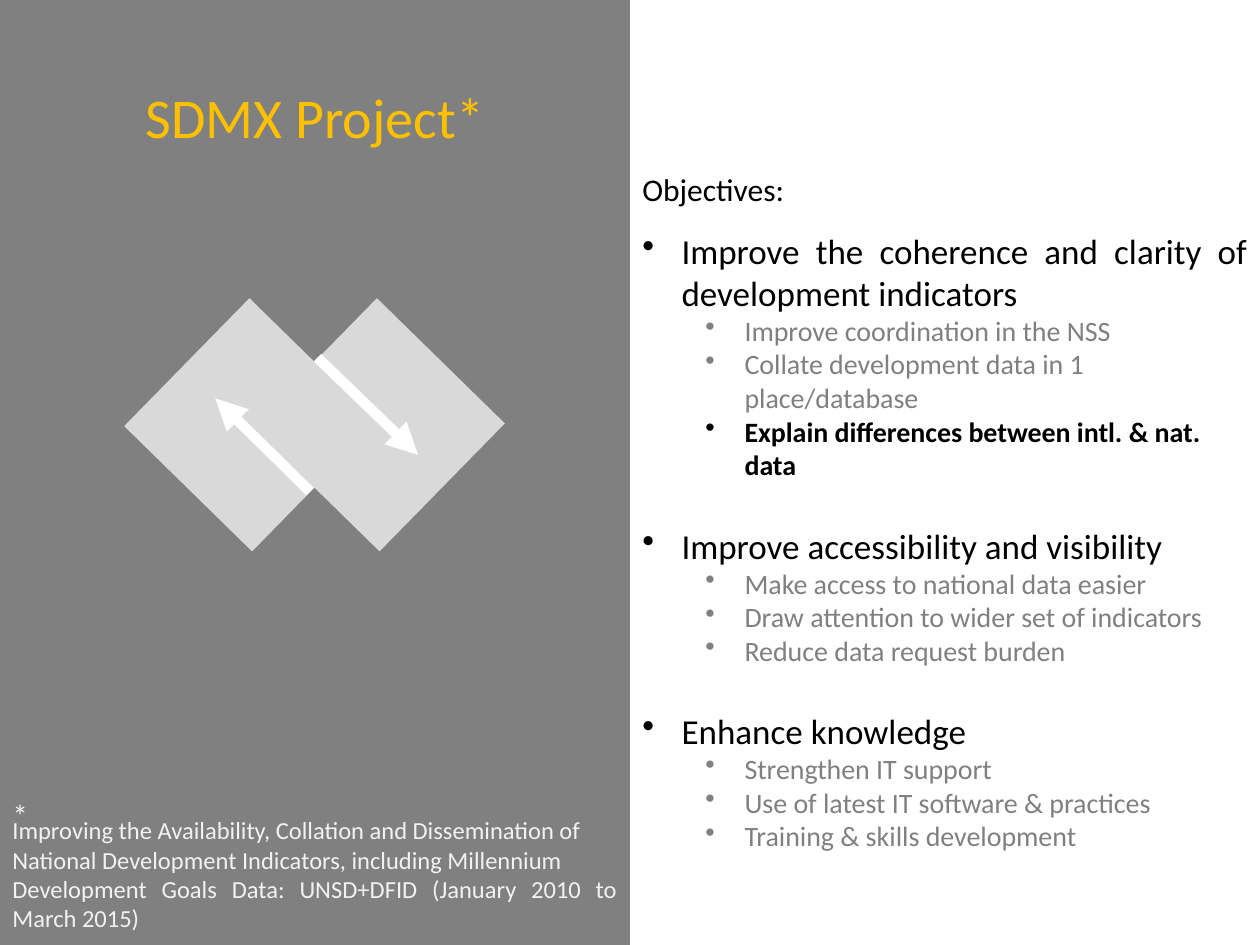
from dataclasses import dataclass

from lxml import etree
from pptx import Presentation
from pptx import util as u
from pptx.dml.color import RGBColor
from pptx.enum import shapes, text
from pptx.oxml.ns import qn


@dataclass(frozen=True)
class Theme:
    font: str = "Calibri"
    panel: str = "808080"
    accent: str = "FFC000"
    ink: str = "000000"
    muted: str = "808080"
    pale: str = "F2F2F2"
    tile: str = "D9D9D9"
    arrow: str = "FFFFFF"
    title_size: int = 32
    goal_size: int = 20
    label_size: int = 18
    step_size: int = 16
    note_size: int = 14


THEME = Theme()
LEFT, JUSTIFY, CENTER = (text.PP_ALIGN.LEFT, text.PP_ALIGN.JUSTIFY,
                         text.PP_ALIGN.CENTER)
WIDTH, HEIGHT = 25.4, 19.05
HALF = WIDTH / 2

# Each goal with its steps; a step is (wording, emphasised).
OBJECTIVES = [
    ("Improve the coherence and clarity of development indicators", [
        ("Improve coordination in the NSS", False),
        ("Collate development data in 1 place/database", False),
        ("Explain differences between intl. & nat. data", True)]),
    ("Improve accessibility and visibility", [
        ("Make access to national data easier", False),
        ("Draw attention to wider set of indicators", False),
        ("Reduce data request burden", False)]),
    ("Enhance knowledge", [
        ("Strengthen IT support", False),
        ("Use of latest IT software & practices", False),
        ("Training & skills development", False)]),
]
FOOTNOTE = [
    "Improving the Availability, Collation and Dissemination of",
    "National Development Indicators, including Millennium",
    "Development Goals Data: UNSD+DFID (January 2010 to March 2015)",
]


class SlideBuilder:
    """Holds the theme and the current slide; lengths are in centimetres."""

    def __init__(self, slide, theme):
        self.slide = slide
        self.theme = theme

    def rectangle(self, left, top, width, height, color, rotation=0):
        box = self.slide.shapes.add_shape(
            shapes.MSO_SHAPE.RECTANGLE,
            u.Cm(left), u.Cm(top), u.Cm(width), u.Cm(height))
        box.shadow.inherit = False
        box.fill.solid()
        box.fill.fore_color.rgb = RGBColor.from_string(color)
        box.line.fill.background()
        box.rotation = rotation
        return box

    def text_frame(self, left, top, width, height, wrap=True):
        frame = self.slide.shapes.add_textbox(
            u.Cm(left), u.Cm(top), u.Cm(width), u.Cm(height)).text_frame
        frame.word_wrap = wrap
        return frame

    def paragraph(self, frame, wording, size, color, align=LEFT, bold=False):
        """Fill the empty first paragraph of the frame, or add another."""
        first = frame.paragraphs[0]
        line = frame.add_paragraph() if first.runs else first
        line.add_run().text = wording
        line.alignment = align
        line.font.name = self.theme.font
        line.font.size = u.Pt(size)
        line.font.bold = bold
        line.font.color.rgb = RGBColor.from_string(color)
        return line

    def bullet(self, line, indent, level=0):
        line.level = level
        properties = line._p.get_or_add_pPr()
        properties.set("marL", str(u.Cm(indent)))
        properties.set("indent", str(-u.Cm(0.79)))
        mark = etree.Element(qn("a:buChar"), char="•")
        properties.find(qn("a:defRPr")).addprevious(mark)

    def arrow(self, start, end):
        line = self.slide.shapes.add_connector(
            shapes.MSO_CONNECTOR.STRAIGHT, *map(u.Cm, start + end))
        line.line.width = u.Pt(6)
        line.line.color.rgb = RGBColor.from_string(self.theme.arrow)
        etree.SubElement(line.line._get_or_add_ln(), qn("a:tailEnd"),
                         type="triangle")
        etree.SubElement(line._element.spPr, qn("a:effectLst"))


def add_objectives(builder):
    theme = builder.theme
    frame = builder.text_frame(HALF, 4.5, HALF, 12.65)
    for number, (goal, steps) in enumerate(OBJECTIVES):
        line = builder.paragraph(frame, goal, theme.goal_size, theme.ink,
                                 JUSTIFY)
        builder.bullet(line, 0.79)
        if number:
            line.space_before = u.Pt(24.4)
        for step, emphasised in steps:
            color = theme.ink if emphasised else theme.muted
            line = builder.paragraph(frame, step, theme.step_size, color,
                                     bold=emphasised)
            builder.bullet(line, 2.06, level=1)


def main():
    deck = Presentation()
    deck.slide_width, deck.slide_height = u.Cm(WIDTH), u.Cm(HEIGHT)
    builder = SlideBuilder(deck.slides.add_slide(deck.slide_layouts[6]), THEME)

    builder.rectangle(0, 0, HALF, HEIGHT, THEME.panel)
    title = builder.rectangle(0, 0.74, HALF, 3.2, THEME.panel).text_frame
    title.vertical_anchor = text.MSO_ANCHOR.MIDDLE
    builder.paragraph(title, "SDMX Project*", THEME.title_size, THEME.accent,
                      CENTER)

    add_objectives(builder)

    footnote = builder.text_frame(0, 16.31, HALF, 2.64)
    for sentence in FOOTNOTE:
        builder.paragraph(footnote, sentence, THEME.note_size, THEME.pale,
                          JUSTIFY)
    asterisk = builder.text_frame(0, 15.93, 0.84, 1.02, wrap=False)
    builder.paragraph(asterisk, "*", THEME.label_size, THEME.pale)
    heading = builder.text_frame(HALF, 3.3, 8.2, 1.02)
    builder.paragraph(heading, "Objectives:", THEME.label_size, THEME.ink)

    for left in (3.25, 5.82):
        builder.rectangle(left, 6.76, 3.61, 3.61, THEME.tile, rotation=44.4)
    builder.arrow((6.25, 9.91), (4.34, 8.03))
    builder.arrow((6.4, 7.21), (8.43, 9.17))

    deck.save("out.pptx")


if __name__ == "__main__":
    main()
